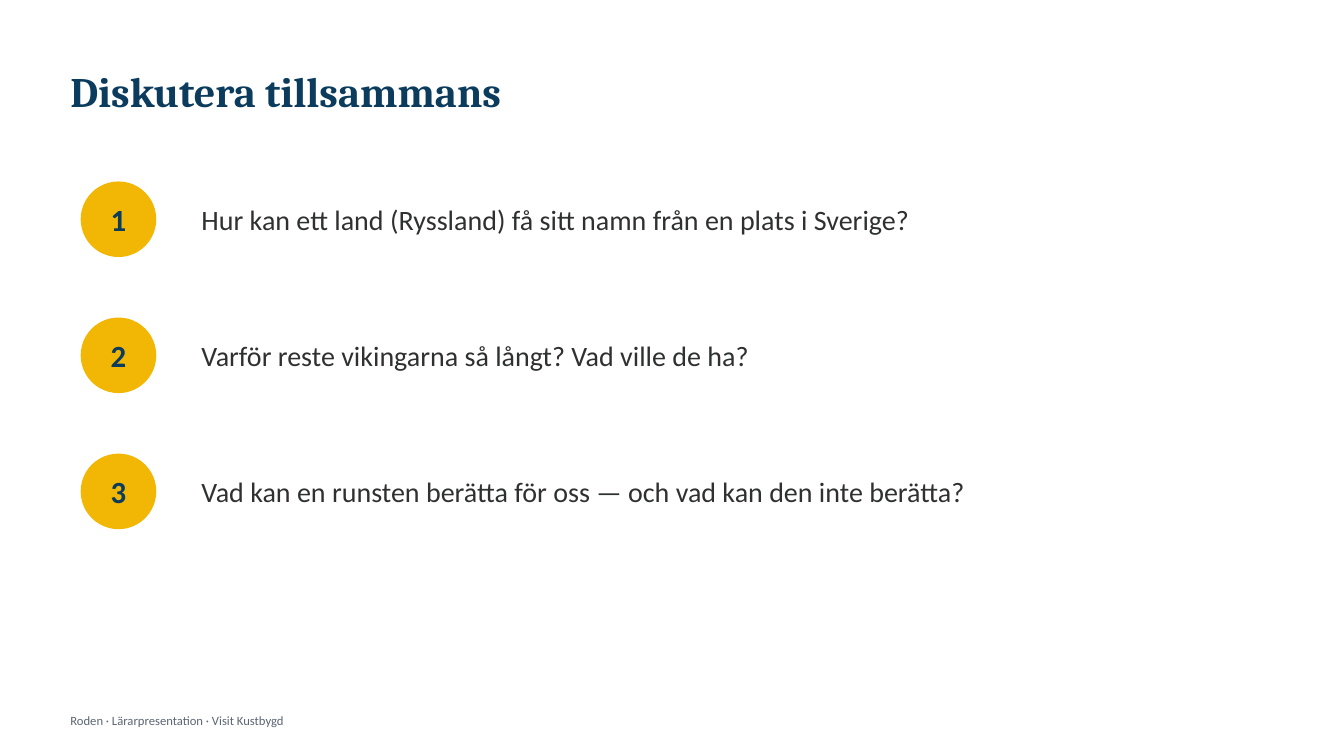
from dataclasses import dataclass

from pptx import Presentation
from pptx.dml.color import RGBColor
from pptx.enum.shapes import MSO_SHAPE as Shape
from pptx.enum.text import MSO_ANCHOR as Anchor, PP_ALIGN as Align
from pptx.util import Inches, Pt


@dataclass(frozen=True)
class Theme:
    navy: str = "0B3C5D"
    gold: str = "F2B705"
    ink: str = "2F3030"
    grey: str = "5B6573"
    heading_font: str = "Cambria"
    body_font: str = "Calibri"
    title_size: int = 30
    number_size: int = 22
    question_size: int = 20
    footer_size: int = 9


THEME = Theme()

QUESTIONS = [
    "Hur kan ett land (Ryssland) få sitt namn från en plats i Sverige?",
    "Varför reste vikingarna så långt? Vad ville de ha?",
    "Vad kan en runsten berätta för oss — och vad kan den inte berätta?",
]
FIRST_ROW_TOP = 1.7
ROW_PITCH = 1.35
ROW_HEIGHT = 0.95
BADGE_SIZE = 0.75


def write_text(frame, text, *, size, color, font=THEME.body_font, bold=False, align=Align.LEFT):
    frame.word_wrap = True
    frame.vertical_anchor = Anchor.MIDDLE
    para = frame.paragraphs[0]
    para.alignment = align
    span = para.add_run()
    span.text = text
    span.font.name = font
    span.font.size = Pt(size)
    span.font.bold = bold
    span.font.color.rgb = RGBColor.from_string(color)


def add_text(page, text, left, top, width, height, **style):
    box = page.shapes.add_textbox(Inches(left), Inches(top), Inches(width), Inches(height))
    write_text(box.text_frame, text, **style)


def add_badge(page, number, left, top):
    badge = page.shapes.add_shape(
        Shape.OVAL, Inches(left), Inches(top), Inches(BADGE_SIZE), Inches(BADGE_SIZE)
    )
    badge.shadow.inherit = False
    badge.fill.solid()
    badge.fill.fore_color.rgb = RGBColor.from_string(THEME.gold)
    badge.line.fill.background()
    frame = badge.text_frame
    frame.margin_left = frame.margin_right = frame.margin_top = frame.margin_bottom = 0
    write_text(frame, str(number), size=THEME.number_size, color=THEME.navy,
               bold=True, align=Align.CENTER)


def add_question(page, number, question):
    top = FIRST_ROW_TOP + (number - 1) * ROW_PITCH
    add_badge(page, number, 0.8, top + (ROW_HEIGHT - BADGE_SIZE) / 2)
    add_text(page, question, 1.9, top, 10.6, ROW_HEIGHT,
             size=THEME.question_size, color=THEME.ink)


def main():
    deck = Presentation()
    deck.slide_width = Inches(13.33)
    deck.slide_height = Inches(7.5)
    page = deck.slides.add_slide(deck.slide_layouts[6])

    add_text(page, "Diskutera tillsammans", 0.6, 0.45, 12.13, 0.9,
             size=THEME.title_size, color=THEME.navy, font=THEME.heading_font, bold=True)
    for number, question in enumerate(QUESTIONS, start=1):
        add_question(page, number, question)
    add_text(page, "Roden · Lärarpresentation · Visit Kustbygd", 0.6, 7, 8, 0.3,
             size=THEME.footer_size, color=THEME.grey)

    deck.save("out.pptx")


if __name__ == "__main__":
    main()
